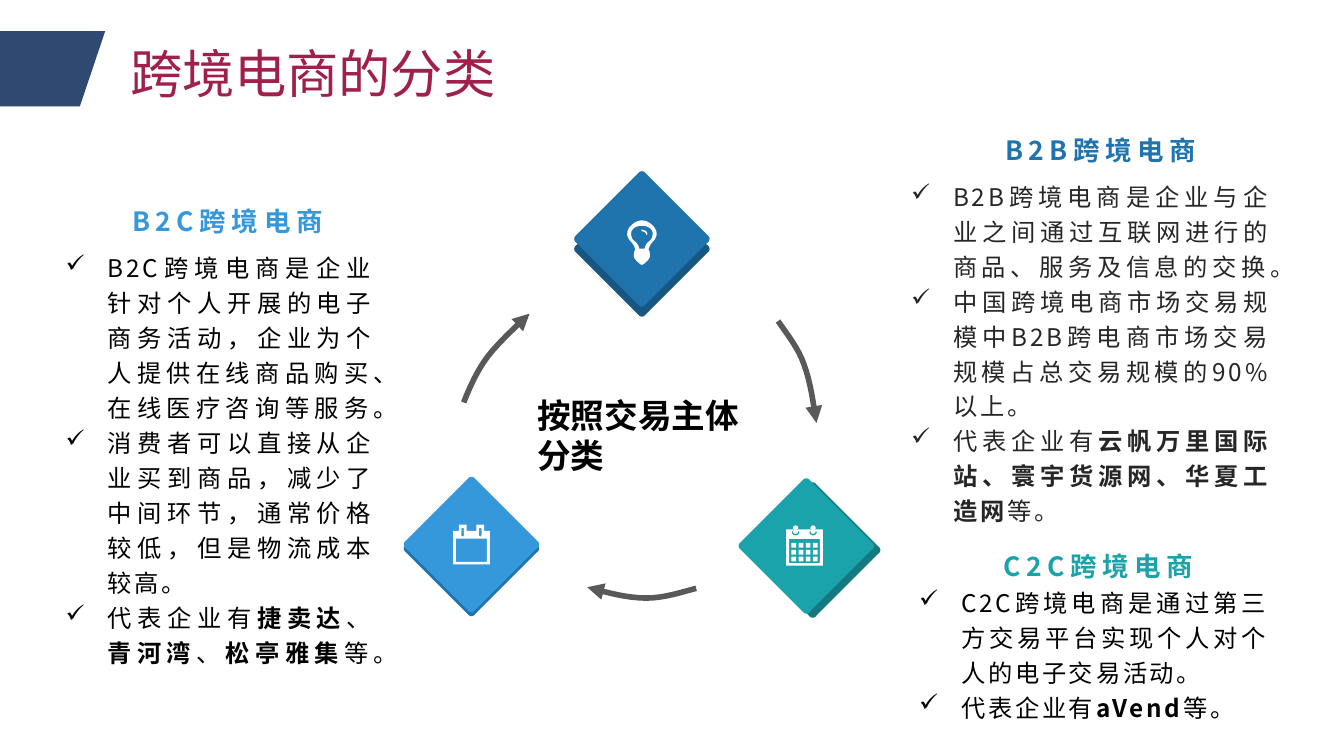
from lxml.etree import SubElement
from pptx import Presentation
from pptx.dml.color import RGBColor
from pptx.enum.text import MSO_ANCHOR as Anchor, MSO_AUTO_SIZE as AutoSize, PP_ALIGN as Align
from pptx.oxml.ns import qn
from pptx.util import Pt

NAVY = RGBColor(0x30, 0x49, 0x71)
CRIMSON = RGBColor(0xA0, 0x20, 0x4C)
BLUE = RGBColor(0x1F, 0x74, 0xAD)
DARK_BLUE = RGBColor(0x17, 0x57, 0x82)
SKY = RGBColor(0x34, 0x98, 0xDB)
TEAL = RGBColor(0x1A, 0xA3, 0xAA)
DARK_TEAL = RGBColor(0x14, 0x7A, 0x7F)
GRAY = RGBColor(0x59, 0x59, 0x59)
CHARCOAL = RGBColor(0x26, 0x26, 0x26)
BLACK = RGBColor(0, 0, 0)
WHITE = RGBColor(0xFF, 0xFF, 0xFF)


def curve(start, *segments, steps=8):
    """Points along a chain of cubic segments, each (control, control, end)."""
    points = [start]
    for c1, c2, end in segments:
        p0 = points[-1]
        for i in range(1, steps + 1):
            t = i / steps
            u = 1 - t
            points.append(tuple(u**3 * a + 3 * u * u * t * b + 3 * u * t * t * c + t**3 * d
                                for a, b, c, d in zip(p0, c1, c2, end)))
    return points


def rect(x, y, w, h):
    return [(x, y), (x + w, y), (x + w, y + h), (x, y + h)]


def pill(x, y, w, h):
    """Upright pill with rounded ends, inside the given frame."""
    r, right, low = w / 2, x + w, y + h
    top = curve((x, y + r), ((x, y - r / 3), (right, y - r / 3), (right, y + r)))
    return top + curve((right, low - r), ((right, low + r / 3), (x, low + r / 3), (x, low - r)))


def mirrored(half):
    """Close a right-hand half outline with its reflection about x = 0."""
    return half + [(-x, y) for x, y in reversed(half)]


def diamond():
    """Rounded diamond centred on the origin."""
    corner = curve((-2.2, 34.9), ((-0.9, 36.7), (0.9, 36.7), (2.2, 34.9)))
    points = []
    for _ in range(4):
        points += corner
        corner = [(y, -x) for x, y in corner]
    return points


def calendar_grid():
    """Calendar with day cells; overlaps alternate between filled and open."""
    rings = [x for x in (3.6, 13)]
    cells = [rect(2.8 + 3.85 * col, 9.4 + 3.7 * row, 2.5, 2.5)
             for row in range(3) for col in range(4)]
    return ([pill(x - 0.7, 2.2, 4.2, 3.2) for x in rings] + [pill(x, 0, 2.8, 4.5) for x in rings]
            + [rect(0, 2.2, 19.6, 19.4), rect(1.6, 7.2, 16.4, 13)] + cells)


def calendar_blank():
    tabs = [3, 12.4]
    return ([rect(x, 0, 4.2, 3.4) for x in tabs] + [pill(x + 1.4, 1.8, 1.4, 4.6) for x in tabs]
            + [rect(0, 3.4, 19.6, 18), rect(1.5, 7.6, 16.6, 12.4)])


def bulb():
    glass = curve((0, 0), ((3.6, 0), (7.9, 3.6), (7.9, 7.2)), ((7.9, 8.6), (7.2, 10), (5.8, 11.5)),
                  ((5, 12.2), (3.6, 14.4), (3.6, 15.8)), ((4.3, 16.5), (4.3, 18), (4.3, 18.7)),
                  ((4.3, 20.2), (3.6, 21), (2.2, 22.3)), ((1.4, 23), (0.7, 23.8), (0, 23.8)))
    hollow = curve((0, 2.9), ((2.9, 2.9), (5.8, 4.3), (5.8, 7.2)), ((5.8, 8), (5.4, 9.4), (5, 10.1)),
                   ((3.6, 11.5), (1.6, 12.8), (1.5, 15.1)))
    glint = curve((-0.3, 5), ((1.4, 5), (2.9, 5.8), (2.9, 7.2)), ((2.9, 8), (2.2, 8), (2.2, 7.2)),
                  ((2.2, 6.5), (0.7, 5.8), (-0.3, 5.8)))
    return [mirrored(glass), mirrored(hollow), glint]


class SlideBuilder:
    FONT = "Noto Sans CJK SC"
    GRID = 100  # outline units per point

    def __init__(self, slide):
        self.slide = slide

    def outline(self, contours, x=0, y=0, closed=True):
        moved = [[((px + x) * self.GRID, (py + y) * self.GRID) for px, py in c] for c in contours]
        builder = self.slide.shapes.build_freeform(*moved[0][0], scale=Pt(1) / self.GRID)
        for i, points in enumerate(moved):
            if i:
                builder.move_to(*points[0])
            builder.add_line_segments(points[1:], close=closed)
        shape = builder.convert_to_shape()
        shape.shadow.inherit = False
        return shape

    def solid(self, contours, color, x=0, y=0):
        shape = self.outline(contours, x, y)
        shape.fill.solid()
        shape.fill.fore_color.rgb = color
        shape.line.fill.background()

    def arc_arrow(self, points):
        """Curved arrow whose head sits on the first point."""
        shape = self.outline([points], closed=False)
        shape.fill.background()
        shape.line.color.rgb = GRAY
        shape.line.width = Pt(3)
        SubElement(shape.line._get_or_add_ln(), qn("a:headEnd"), type="triangle")

    def text(self, frame, paragraphs, size, color, bold=False, spacing=0, align=None,
             anchor=Anchor.TOP, margins=None, bullet=False, line=None):
        """Each paragraph is a list of runs; every second run is bold."""
        box = self.slide.shapes.add_textbox(*map(Pt, frame)).text_frame
        box.word_wrap = True
        box.vertical_anchor = anchor
        box.auto_size = AutoSize.NONE if margins else AutoSize.SHAPE_TO_FIT_TEXT
        if margins:
            (box.margin_left, box.margin_top, box.margin_right,
             box.margin_bottom) = map(Pt, margins)
        for i, runs in enumerate(paragraphs):
            para = box.add_paragraph() if i else box.paragraphs[0]
            if bullet:
                props = para._p.get_or_add_pPr()
                props.set("marL", str(Pt(22.5)))
                props.set("indent", str(-Pt(22.5)))
                SubElement(props, qn("a:buChar"), char="✓")
            para.alignment = align
            para.line_spacing = line
            for j, words in enumerate(runs):
                run = para.add_run()
                run.text = words
                run.font.size = Pt(size)
                run.font.bold = bold or j % 2 == 1
                run.font.color.rgb = color
                run.font.name = self.FONT
                props = run._r.get_or_add_rPr()
                SubElement(props, qn("a:ea"), typeface=self.FONT)
                if spacing:
                    props.set("spc", str(int(spacing * 100)))

    def heading(self, frame, words, color, align=Align.JUSTIFY):
        self.text(frame, [[words]], 14.2, color, bold=True, spacing=3, align=align,
                  anchor=Anchor.BOTTOM, margins=(5, 3, 5, 0), line=1.2)

    def bullets(self, frame, paragraphs, color=BLACK):
        self.text(frame, paragraphs, 13, color, spacing=1.5, align=Align.JUSTIFY,
                  margins=(5, 0, 5, 3), bullet=True, line=1.2)


def main():
    deck = Presentation()
    deck.slide_width, deck.slide_height = Pt(720), Pt(405)
    page = SlideBuilder(deck.slides.add_slide(deck.slide_layouts[6]))

    page.solid([[(0, 16.6), (56.4, 16.6), (42.8, 57), (0, 57)]], NAVY)
    page.text((62.6, 18.7, 255.6, 41), [["跨境电商的分类"]], 28, CRIMSON)

    page.arc_arrow(curve((437.4, 226.6), ((435.6, 215.6), (434.2, 204.6), (430.6, 195)),
                         ((427.6, 186.5), (422, 179.5), (416.8, 172))))
    page.arc_arrow(curve((314.6, 314.6), ((325.4, 317.5), (336, 320.4), (346.3, 320.4)),
                         ((355.7, 320.4), (364.3, 317.5), (373, 315.2))))
    page.arc_arrow(curve((283.7, 168), ((275.8, 175.5), (267.8, 182.8), (261.4, 190.8)),
                         ((255.6, 198.6), (252, 206.6), (248.4, 215.6))))

    # centre, shade offset, face, shade, icon, icon origin
    nodes = [((432, 292.5), (3.4, 2.2), TEAL, DARK_TEAL, calendar_grid(), (421.2, 281.5)),
             ((252.6, 291.7), (0, 2.2), SKY, BLUE, calendar_blank(), (242.8, 281)),
             ((343.9, 128), (0, 5.4), BLUE, DARK_BLUE, bulb(), (343.9, 118.1))]
    for (x, y), (dx, dy), face, shade, icon, origin in nodes:
        page.solid([diamond()], shade, x + dx, y + dy)
        page.solid([diamond()], face, x, y)
        page.solid(icon, WHITE, *origin)

    page.heading((533.5, 57.6, 160, 31), "B2B跨境电商", BLUE)
    page.bullets((483.1, 94.3, 202.3, 150.5), [
        ["B2B跨境电商是企业与企业之间通过互联网进行的商品、服务及信息的交换。"],
        ["中国跨境电商市场交易规模中B2B跨电商市场交易规模占总交易规模的90%以上。"],
        ["代表企业有", "云帆万里国际站、寰宇货源网、华夏工造网", "等。"]], CHARCOAL)

    page.heading((532.8, 280.8, 160, 31), "C2C跨境电商", TEAL)
    page.bullets((487.4, 311.8, 197.3, 92), [
        ["C2C跨境电商是通过第三方交易平台实现个人对个人的电子交易活动。"],
        ["代表企业有", "aVend", "等。"]])

    page.heading((41.8, 90, 160, 36.7), "B2C跨境电商", SKY, Align.CENTER)
    page.bullets((30.2, 132.5, 175, 226.8), [
        ["B2C跨境电商是企业针对个人开展的电子商务活动，企业为个人提供在线商品购买、在线医疗咨询等服务。"],
        ["消费者可以直接从企业买到商品，减少了中间环节，通常价格较低，但是物流成本较高。"],
        ["代表企业有", "捷卖达", "、", "青河湾", "、", "松亭雅集", "等。"]])

    page.text((280.8, 208.1, 138.2, 51), [["按照交易主体分类"]], 18, BLACK, bold=True)
    deck.save("out.pptx")


if __name__ == "__main__":
    main()
